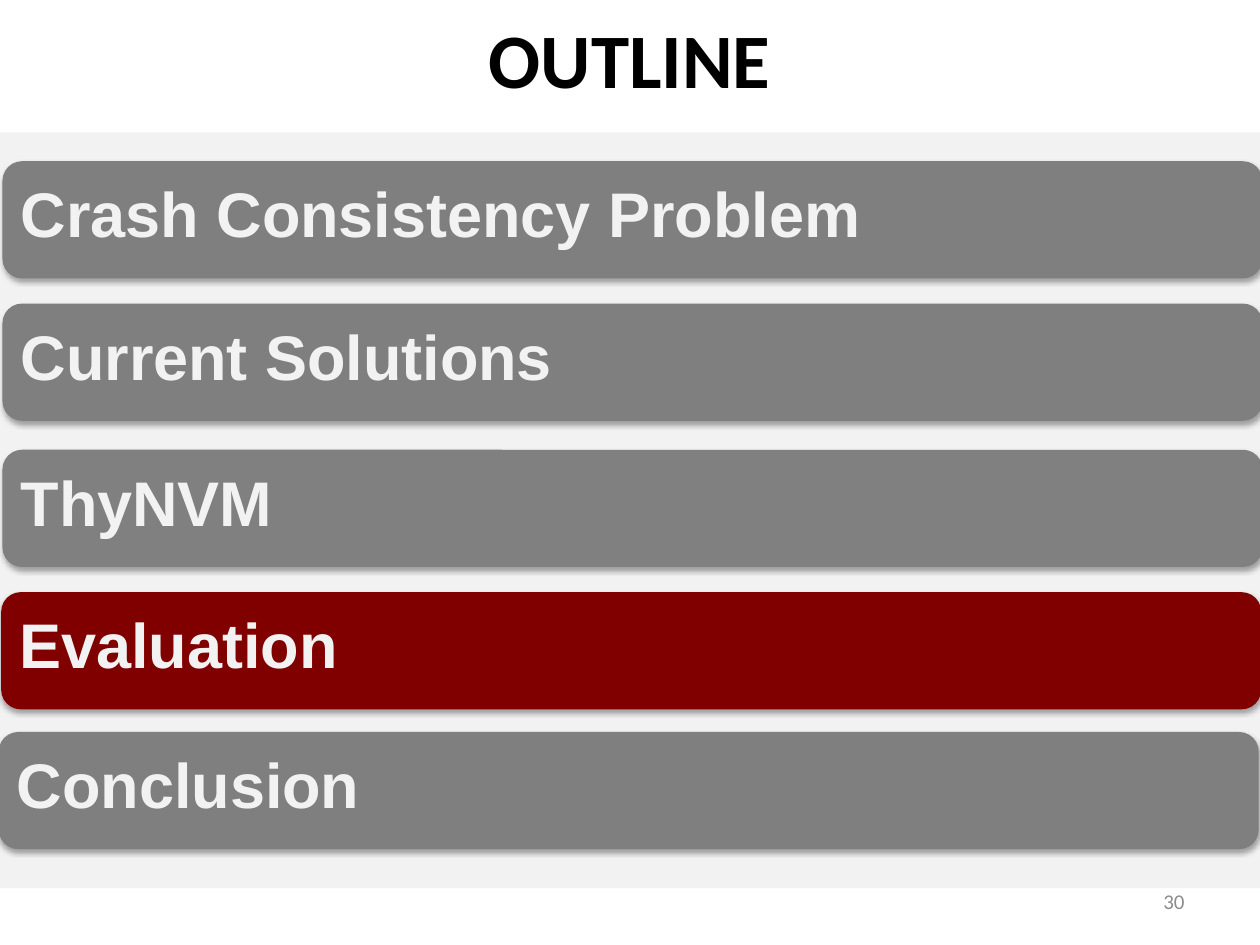
from lxml.etree import SubElement
from pptx import Presentation
from pptx.dml.color import RGBColor
from pptx.enum.shapes import MSO_SHAPE
from pptx.enum.text import MSO_ANCHOR, PP_ALIGN
from pptx.oxml.ns import qn
from pptx.util import Inches, Pt

COLORS = {
    "panel": "F2F2F2",
    "title": "000000",
    "number": "8C8C8C",
    "gray": "7F7F7F",
    "mid": "808080",
    "red": "800000",
    "text": "F2F2F2",
    "shade": "000000",
}

TOPICS = [
    ("Crash Consistency Problem", 0.02, 1.28, "gray"),
    ("Current Solutions", 0.02, 2.41, "gray"),
    ("ThyNVM", 0.02, 3.57, "mid"),
    ("Evaluation", 0.01, 4.7, "red"),
    ("Conclusion", -0.01, 5.81, "gray"),
]


def color(name):
    return RGBColor.from_string(COLORS[name])


def set_text(shape, text, size, font, tint, align, bold=False):
    frame = shape.text_frame
    frame.word_wrap = True
    frame.vertical_anchor = MSO_ANCHOR.MIDDLE
    frame.text = text
    para = frame.paragraphs[0]
    para.alignment = align
    style = para.runs[0].font
    style.size = Pt(size)
    style.name = font
    style.bold = bold
    style.color.rgb = color(tint)
    return para


def add_block(slide, kind, box, tint):
    shape = slide.shapes.add_shape(kind, *map(Inches, box))
    shape.fill.solid()
    shape.fill.fore_color.rgb = color(tint)
    shape.line.fill.background()
    shape.shadow.inherit = False
    return shape


def add_shade(shape):
    effects = shape.element.spPr.find(qn("a:effectLst"))
    shade = SubElement(effects, qn("a:outerShdw"), blurRad=str(Pt(3.1)),
                       dist=str(Pt(1.8)), dir="5400000", rotWithShape="0")
    tint = SubElement(shade, qn("a:srgbClr"), val=COLORS["shade"])
    SubElement(tint, qn("a:alpha"), val="35000")


def add_topic(slide, text, left, top, tint):
    bar = add_block(slide, MSO_SHAPE.ROUNDED_RECTANGLE,
                    (left, top, 10, 0.93), tint)
    add_shade(bar)
    para = set_text(bar, text, 36, "Arial", "text", PP_ALIGN.LEFT, True)
    para.line_spacing = 0.8


def add_label(slide, box, text, size, tint, align, bold=False):
    label = slide.shapes.add_textbox(*map(Inches, box))
    set_text(label, text, size, "Calibri", tint, align, bold)


def main():
    deck = Presentation()
    deck.slide_width = Inches(10)
    deck.slide_height = Inches(7.5)
    slide = deck.slides.add_slide(deck.slide_layouts[6])
    add_block(slide, MSO_SHAPE.RECTANGLE, (0, 1.05, 10, 6), "panel")
    add_label(slide, (0, -0.17, 10, 1.25), "OUTLINE", 44, "title",
              PP_ALIGN.CENTER, True)
    add_label(slide, (7.17, 6.95, 2.33, 0.4), "30", 12, "number",
              PP_ALIGN.RIGHT)
    for topic in TOPICS:
        add_topic(slide, *topic)
    deck.save("out.pptx")


if __name__ == "__main__":
    main()
